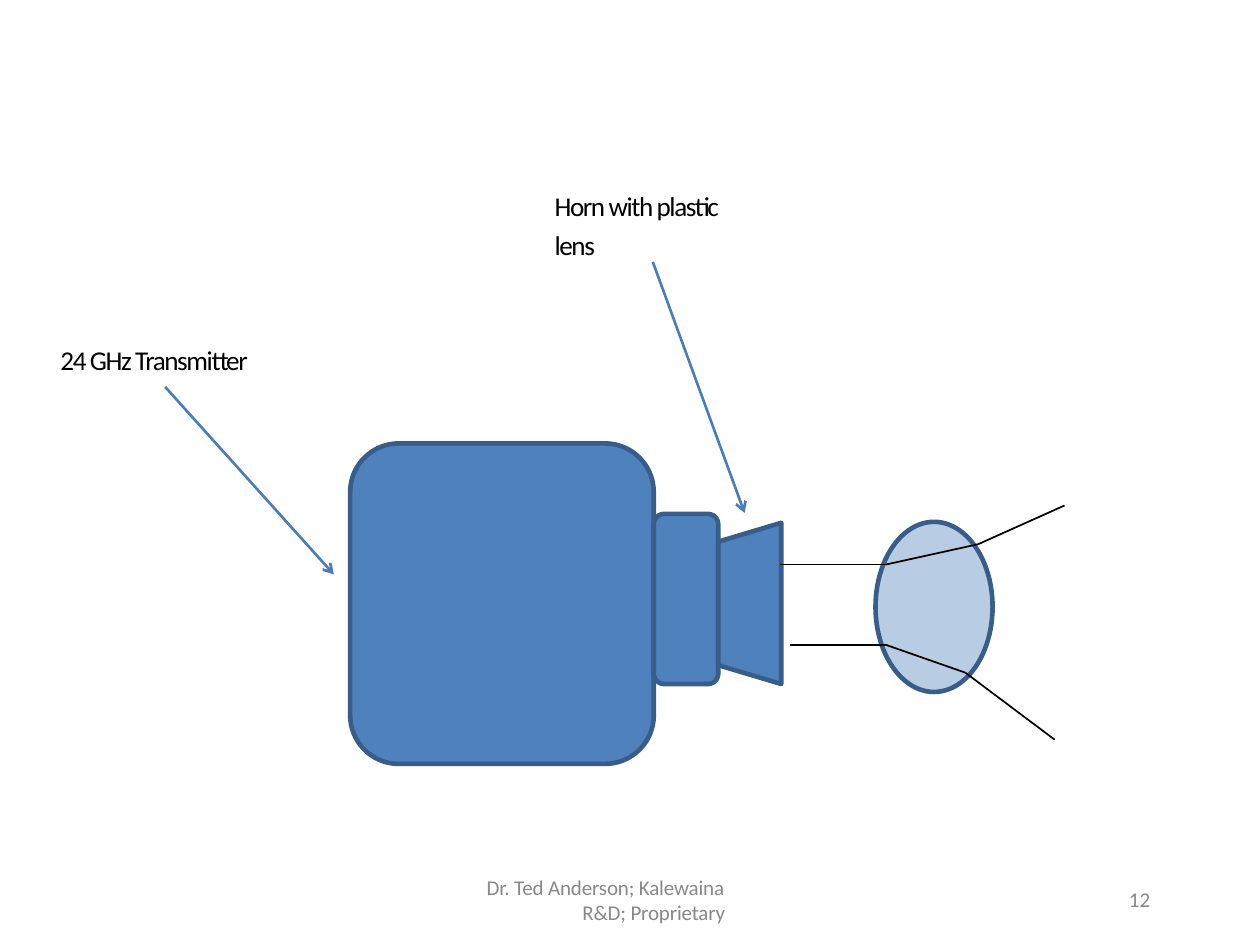
from itertools import pairwise
from lxml.etree import SubElement
from pptx import Presentation
from pptx.dml.color import RGBColor
from pptx.enum.shapes import MSO_CONNECTOR as Link, MSO_SHAPE as Kind
from pptx.oxml.ns import qn
from pptx.util import Cm, Pt

BLUE, EDGE, PALE = "4F81BC", "385D89", "B8CDE4"
ARROW, BLACK, GREY = "497DBA", "000000", "888888"


def paint(item, color):
    """Give a fill, or the fill of a line or font, a solid colour."""
    if hasattr(item, "solid"):
        item.solid()
        item.fore_color.rgb = RGBColor.from_string(color)
    else:
        item.color.rgb = RGBColor.from_string(color)


def join(start, end, color, width):
    """Draw a straight line without a shadow."""
    line = shapes.add_connector(Link.STRAIGHT, *map(Cm, start + end))
    paint(line.line, color)
    line.line.width = Pt(width)
    SubElement(line._element.spPr, qn("a:effectLst"))
    return line


prs = Presentation()
prs.slide_width, prs.slide_height = Cm(25.4), Cm(19.05)
slide = prs.slides.add_slide(prs.slide_layouts[6])
shapes = slide.shapes

# Transmitter, neck, horn and lens
body = shapes.add_shape(Kind.ROUNDED_RECTANGLE, Cm(7.06), Cm(8.94), Cm(6.12), Cm(6.46))
neck = shapes.add_shape(Kind.ROUNDED_RECTANGLE, Cm(13.18), Cm(10.36), Cm(1.3), Cm(3.43))
for box in (body, neck):
    box.adjustments[0] = 0.16

path = shapes.build_freeform(Cm(15.75), Cm(10.54))
path.add_line_segments([(Cm(x), Cm(y)) for x, y in
                        ((14.48, 10.92), (14.48, 13.41), (15.75, 13.79))])
horn = path.convert_to_shape()
lens = shapes.add_shape(Kind.OVAL, Cm(17.65), Cm(10.52), Cm(2.36), Cm(3.43))

for part, color in ((body, BLUE), (neck, BLUE), (horn, BLUE), (lens, PALE)):
    part.shadow.inherit = False
    paint(part.fill, color)
    paint(part.line, EDGE)
    part.line.width = Pt(2.65)

# Rays through the lens
rays = (
    ((15.72, 11.38), (17.86, 11.38), (19.72, 10.97), (21.46, 10.19)),
    ((15.93, 13), (17.86, 13), (19.46, 13.56), (21.26, 14.91)),
)
for ray in rays:
    for start, end in pairwise(ray):
        join(start, end, BLACK, 1)

# Labels: place, text, size, colour, spacing, left margin, indent, line spacing
labels = (
    ((1.19, 6.93, 3.85, 0.71), "24 GHz Transmitter", 15.5, BLACK, -80, 0.03, 0, 1),
    ((11.15, 3.68, 3.43, 1.63), "Horn with plastic lens", 15.5, BLACK, -80, 0.03, 0, 1.2),
    ((22.68, 17.88, 0.79, 0.56), "12", 12, GREY, 0, 0.08, 0, 1),
    ((9.78, 17.63, 5.75, 1.07), "Dr. Ted Anderson; Kalewaina R&D; Proprietary",
     12, GREY, -8, 1.96, -1.93, 1),
)
for place, text, size, color, gap, left, indent, lead in labels:
    frame = shapes.add_textbox(*map(Cm, place)).text_frame
    frame.word_wrap = True
    frame.margin_left = frame.margin_right = 0
    frame.margin_top = frame.margin_bottom = 0
    para = frame.paragraphs[0]
    para.line_spacing = lead
    props = para._p.get_or_add_pPr()
    props.set("marL", str(Cm(left)))
    props.set("indent", str(Cm(indent)))
    run = para.add_run()
    run.text = text
    run.font.name, run.font.size = "Calibri", Pt(size)
    paint(run.font, color)
    run._r.get_or_add_rPr().set("spc", str(gap))

# Arrows from the labels
for start, end in (((3.33, 7.8), (6.73, 11.58)), ((13.16, 5.28), (15.01, 10.34))):
    arrow = join(start, end, ARROW, 1.5)
    SubElement(arrow.line._get_or_add_ln(), qn("a:tailEnd"), type="arrow")

prs.save("out.pptx")
